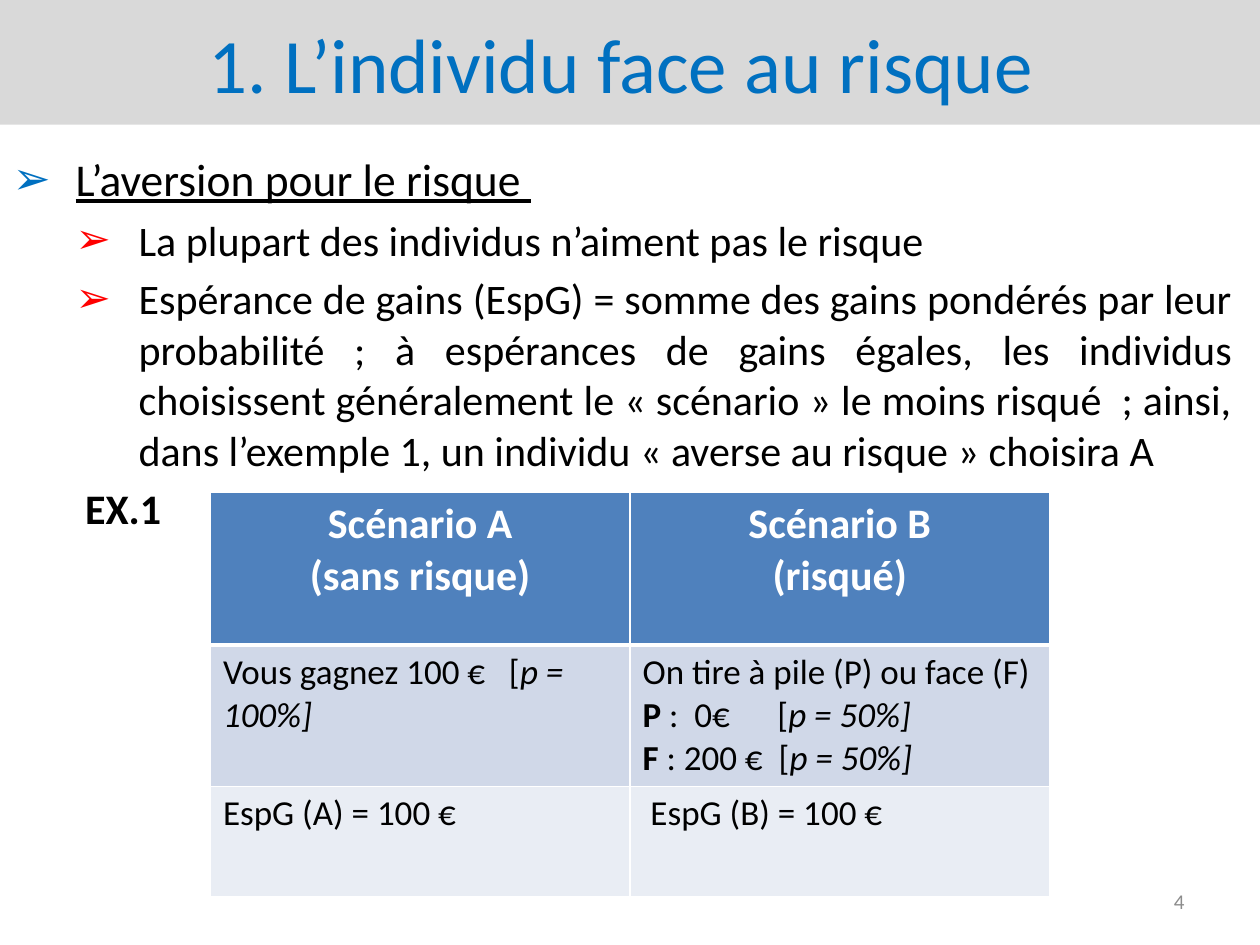
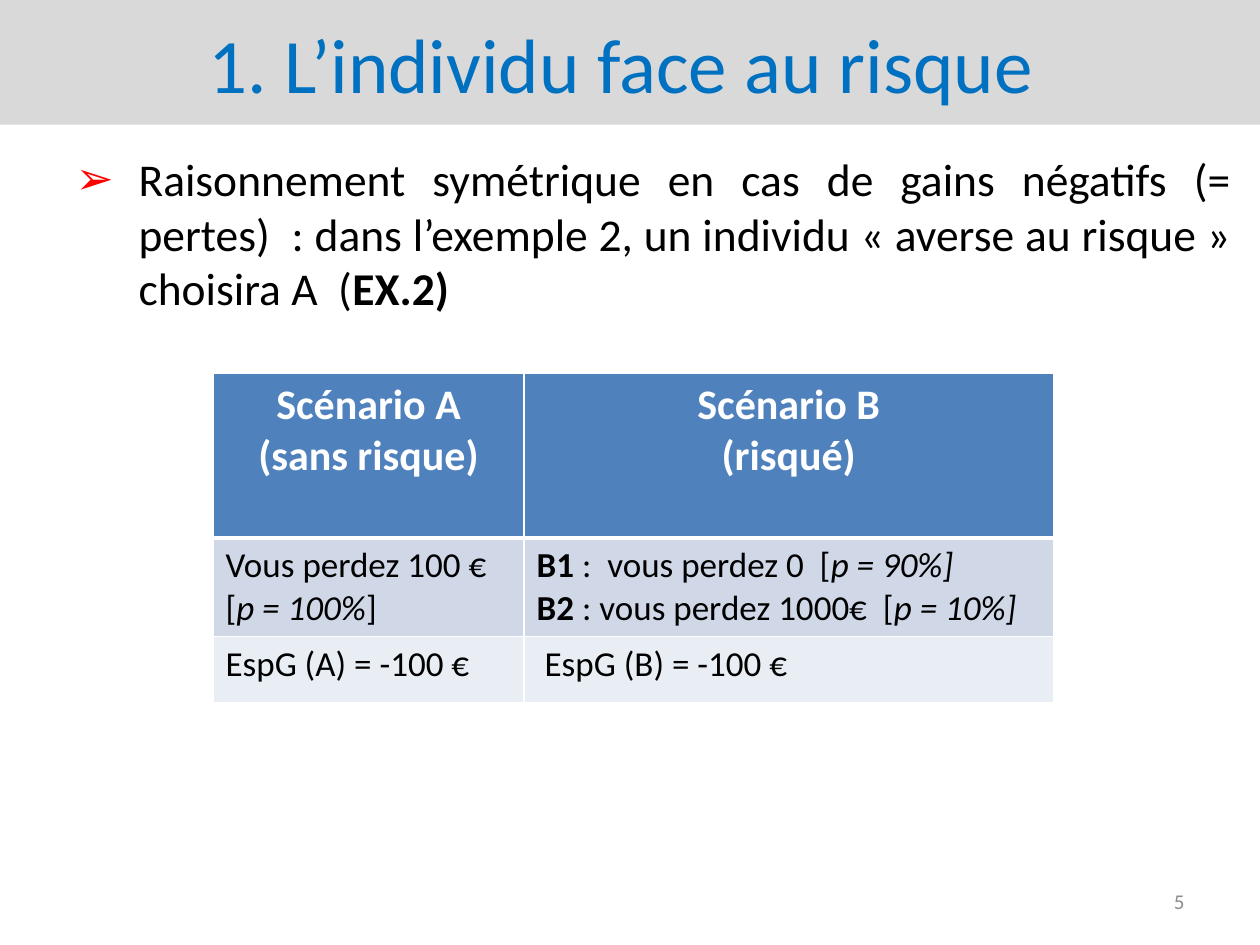
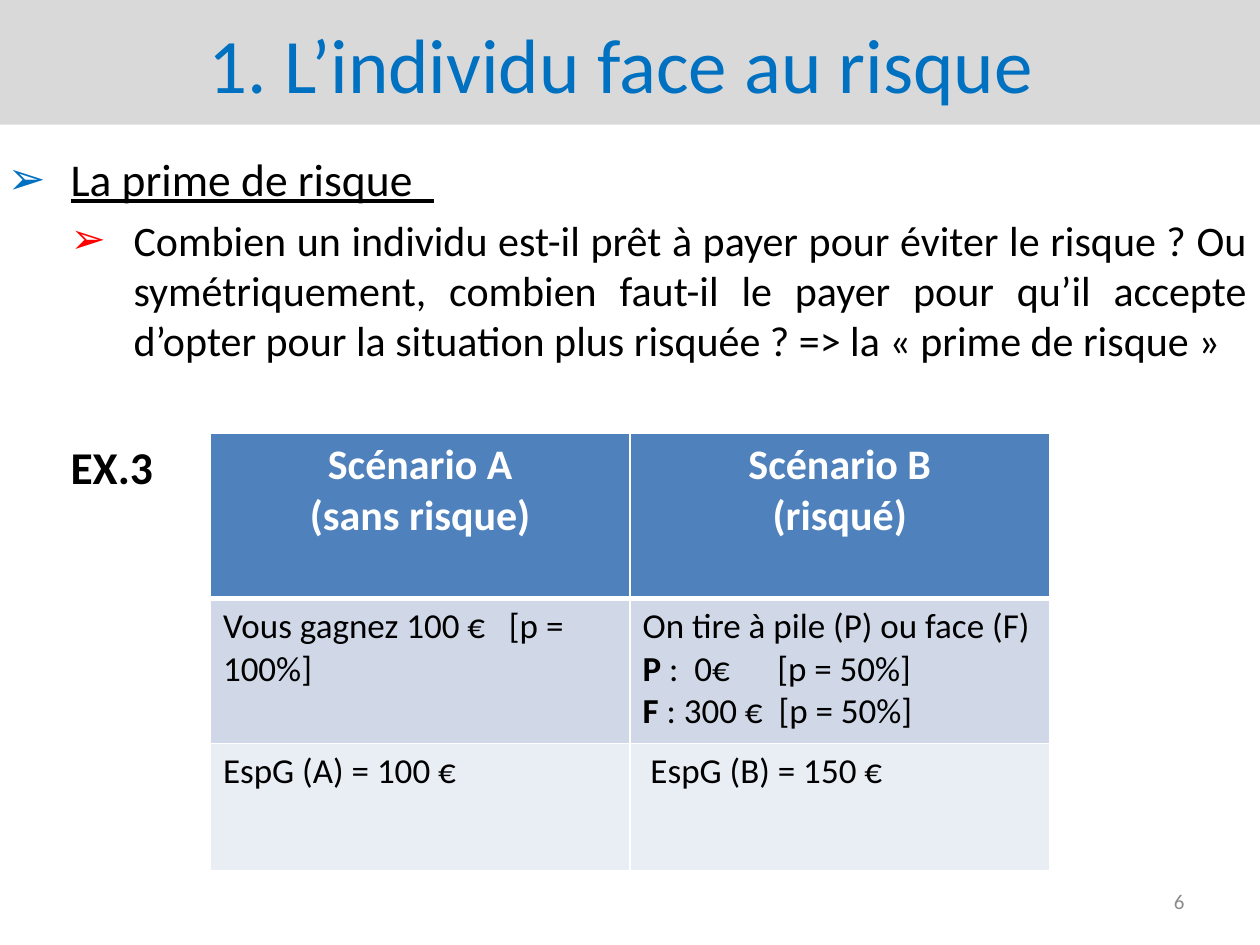
from lxml.etree import SubElement
from pptx import Presentation
from pptx.dml.color import RGBColor
from pptx.enum.text import MSO_ANCHOR as Anchor, MSO_AUTO_SIZE as AutoSize, PP_ALIGN as Align
from pptx.oxml.ns import qn
from pptx.util import Inches, Pt

# Shared look
FONT = "Calibri"
COLORS = {
    "band": "D9D9D9", "title": "0070C0", "text": "000000", "number": "8C8C8C",
    "topic": "0070C0", "point": "FF0000", "white": "FFFFFF",
    "header": "4F81BD", "odd_row": "D0D8E8", "even_row": "E9EDF4",
}
TITLE = "1. L’individu face au risque "
FIRST_NUMBER = 4
BULLET = "➢"
BOLD, ITALIC, UNDERLINE = {"bold": True}, {"italic": True}, {"underline": True}

# Paragraph kinds: level, left margin, hanging indent in inches, bullet colour
KINDS = {
    "topic": (0, 0.5, -0.5, "topic"),
    "point": (1, 1, -0.5, "point"),
    "label": (1, 0.5, 0, None),
}
HEADER = [[[("Scénario A", BOLD)], [("(sans risque)", BOLD)]],
          [[("Scénario B", BOLD)], [("(risqué)", BOLD)]]]

# Content: body lines are (kind, size, space before, spans);
# table cells are lists of paragraphs, each a list of (text, format) spans
SLIDES = [
    {
        "body_at": (0, 1.15, 9.88, 6.35),
        "body": [
            ("topic", 26, 5.2, [("L’aversion pour le risque ", UNDERLINE)]),
            ("point", 24, 4.8, [("La plupart des individus n’aiment pas le risque ", {})]),
            ("point", 24, 4.8, [(
                "Espérance de gains (EspG) = somme des gains pondérés par leur "
                "probabilité ; à espérances de gains égales, les individus choisissent "
                "généralement le « scénario » le moins risqué  ; ainsi, dans l’exemple 1, "
                "un individu « averse au risque » choisira A", {})]),
            ("label", 24, 4.8, [(" ", {}), ("EX.1", BOLD)]),
        ],
        "table_at": (1.67, 3.91),
        "columns": (3.33, 3.33),
        "rows": (1.21, 1.12, 0.88),
        "cells": [
            [[[("Vous gagnez 100 €   [", {}), ("p = 100%]", ITALIC)]],
             [[("On tire à pile (P) ou face (F)", {})],
              [("P", BOLD), (" :  0€      [", {}), ("p = 50%]", ITALIC)],
              [("F", BOLD), (" : 200 €  [", {}), ("p = 50%]", ITALIC)]]],
            [[[("EspG (A) = 100 €", {})]], [[(" EspG (B) = 100 €", {})]]],
        ],
    },
    {
        "body_at": (0, 1.15, 9.88, 6.35),
        "body": [
            ("point", 26, 5.2, [(
                "Raisonnement symétrique en cas de gains négatifs (= pertes)  : dans "
                "l’exemple 2, un individu « averse au risque » choisira A  (", {}),
                ("EX.2)", BOLD)]),
        ],
        "table_at": (1.69, 2.96),
        "columns": (2.47, 4.2),
        "rows": (1.31, 0.78, 0.53),
        "cells": [
            [[[("Vous perdez 100 €", {})],
              [("[", {}), ("p = 100%", ITALIC), ("]", {})]],
             [[("B1", BOLD), (" :  vous perdez 0  [", {}), ("p = 90%]", ITALIC)],
              [("B2", BOLD), (" : vous perdez 1000€  [", {}), ("p = 10%]", ITALIC)]]],
            [[[("EspG (A) = -100 €", {})]], [[(" EspG (B) = -100 €", {})]]],
        ],
    },
    {
        "body_at": (-0.04, 1.15, 10.04, 6.35),
        "body": [
            ("topic", 26, 5.2, [("La prime de risque  ", UNDERLINE)]),
            ("point", 24, 4.8, [(
                "Combien un individu est-il prêt à payer pour éviter le risque ? Ou "
                "symétriquement, combien faut-il le payer pour qu’il accepte d’opter pour "
                "la situation plus risquée ? => la « prime de risque »", {})]),
            ("label", 26, 42, [("EX.3", BOLD)]),
        ],
        "table_at": (1.67, 3.44),
        "columns": (3.33, 3.33),
        "rows": (1.31, 1.15, 1.01),
        "cells": [
            [[[("Vous gagnez 100 €   [p = 100%]", {})]],
             [[("On tire à pile (P) ou face (F)", {})],
              [("P", BOLD), (" :  0€      [p = 50%]", {})],
              [("F", BOLD), (" : 300 €  [p = 50%]", {})]]],
            [[[("EspG (A) = 100 €", {})]], [[(" EspG (B) = 150 €", {})]]],
        ],
    },
]


def rgb(name):
    return RGBColor.from_string(COLORS[name])


def place(shape, at):
    for side, inches in zip(("left", "top", "width", "height"), at):
        setattr(shape, side, Inches(inches))


def prepare(frame, anchor):
    frame.word_wrap = True
    frame.auto_size = AutoSize.NONE
    frame.vertical_anchor = anchor


def next_para(frame, index):
    return frame.add_paragraph() if index else frame.paragraphs[0]


def write(para, spans, size, color, align):
    para.alignment = align
    for text, formats in spans:
        span = para.add_run()
        span.text = text
        values = {"name": FONT, "size": Pt(size), "bold": False, **formats}
        for attribute, value in values.items():
            setattr(span.font, attribute, value)
        span.font.color.rgb = rgb(color)


def set_indent(para, left, hanging, bullet_color):
    properties = para._p.get_or_add_pPr()
    properties.set("marL", str(Inches(left)))
    properties.set("indent", str(Inches(hanging)))
    if bullet_color:
        color = SubElement(properties, qn("a:buClr"))
        SubElement(color, qn("a:srgbClr"), val=COLORS[bullet_color])
        SubElement(properties, qn("a:buChar"), char=BULLET)


def set_borders(cell, bottom_width, top_width):
    properties = cell._tc.get_or_add_tcPr()
    widths = {"a:lnL": 1, "a:lnR": 1, "a:lnT": top_width, "a:lnB": bottom_width}
    for position, (tag, width) in enumerate(widths.items()):
        line = SubElement(properties, qn(tag), w=str(Pt(width)))
        fill = SubElement(line, qn("a:solidFill"))
        SubElement(fill, qn("a:srgbClr"), val=COLORS["white"])
        properties.insert(position, line)


def add_title(page):
    title = page.shapes.title
    place(title, (0, 0, 10, 0.99))
    title.fill.solid()
    title.fill.fore_color.rgb = rgb("band")
    prepare(title.text_frame, Anchor.MIDDLE)
    write(title.text_frame.paragraphs[0], [(TITLE, {})], 44, "title", Align.CENTER)


def add_body(page, content):
    body = page.placeholders[1]
    place(body, content["body_at"])
    prepare(body.text_frame, Anchor.TOP)
    for index, (kind, size, before, spans) in enumerate(content["body"]):
        level, left, hanging, bullet_color = KINDS[kind]
        para = next_para(body.text_frame, index)
        para.level = level
        para.space_before = Pt(before)
        write(para, spans, size, "text", Align.JUSTIFY)
        set_indent(para, left, hanging, bullet_color)


def add_number(page, number):
    box = page.shapes.add_textbox(Inches(7.17), Inches(6.95), Inches(2.33), Inches(0.4))
    prepare(box.text_frame, Anchor.MIDDLE)
    write(box.text_frame.paragraphs[0], [(str(number), {})], 12, "number", Align.RIGHT)


def add_scenarios(page, content):
    columns, rows = content["columns"], content["rows"]
    left, top = content["table_at"]
    table = page.shapes.add_table(
        len(rows), len(columns), Inches(left), Inches(top),
        Inches(sum(columns)), Inches(sum(rows))).table
    for column, width in zip(table.columns, columns):
        column.width = Inches(width)
    for row, height in zip(table.rows, rows):
        row.height = Inches(height)

    fills = ("header", "odd_row", "even_row")
    for row_index, row in enumerate([HEADER] + content["cells"]):
        is_header = row_index == 0
        look = (24, "white", Align.CENTER) if is_header else (20, "text", Align.LEFT)
        for column_index, paragraphs in enumerate(row):
            cell = table.cell(row_index, column_index)
            cell.fill.solid()
            cell.fill.fore_color.rgb = rgb(fills[row_index])
            set_borders(cell, 3 if is_header else 1, 3 if row_index == 1 else 1)
            for index, spans in enumerate(paragraphs):
                write(next_para(cell.text_frame, index), spans, *look)


def main():
    deck = Presentation()
    deck.slide_width, deck.slide_height = Inches(10), Inches(7.5)
    for number, content in enumerate(SLIDES, FIRST_NUMBER):
        page = deck.slides.add_slide(deck.slide_layouts[0])
        add_title(page)
        add_body(page, content)
        add_number(page, number)
        add_scenarios(page, content)
    deck.save("out.pptx")


if __name__ == "__main__":
    main()
